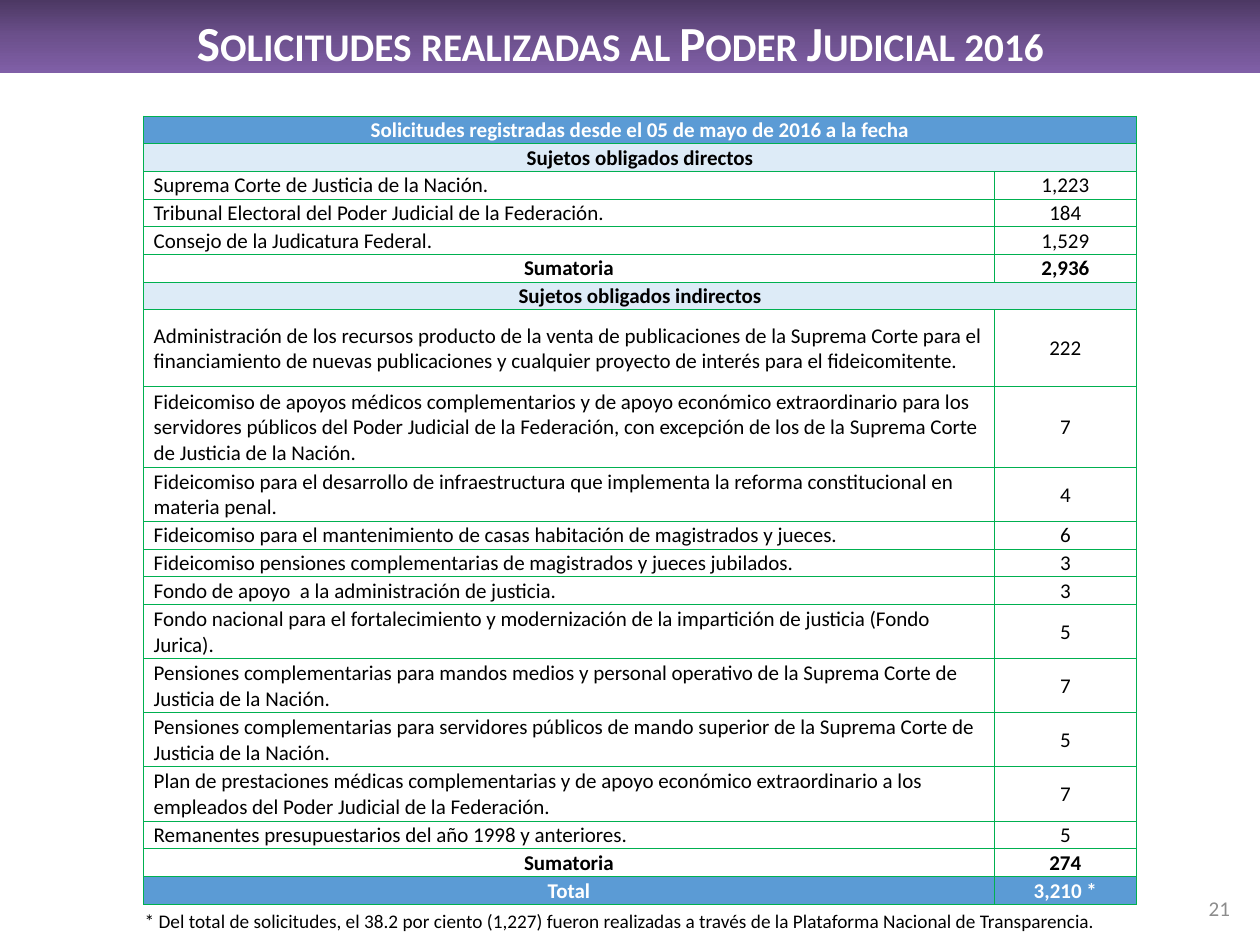
from copy import deepcopy
from lxml.etree import SubElement as Sub
from pptx import Presentation
from pptx.dml.color import RGBColor as RGB
from pptx.enum.shapes import MSO_SHAPE as Shape
from pptx.enum.text import MSO_ANCHOR as Anchor, MSO_AUTO_SIZE as Auto, PP_ALIGN as Align
from pptx.oxml import parse_xml
from pptx.oxml.ns import nsdecls, qn
from pptx.util import Inches, Pt

WHITE = RGB(0xFF, 0xFF, 0xFF)
BLACK = RGB(0, 0, 0)
GRAY = RGB(0x8C, 0x8C, 0x8C)
BLUE = RGB(0x5B, 0x9B, 0xD5)
PALE = RGB(0xDD, 0xEB, 0xF7)
GREEN = RGB(0x00, 0xB0, 0x50)
DARK = RGB(0x4C, 0x38, 0x63)
MID = RGB(0x6C, 0x50, 0x8C)
LIGHT = RGB(0x80, 0x5F, 0xA7)

ROW = 0.22
ROWS = [
    ("head", "Solicitudes registradas desde el 05 de mayo de 2016 a la fecha", None, ROW),
    ("group", "Sujetos obligados directos", None, ROW),
    ("item", "Suprema Corte de Justicia de la Nación.", "1,223", ROW),
    ("item", "Tribunal Electoral del Poder Judicial de la Federación.", "184", ROW),
    ("item", "Consejo de la Judicatura Federal.", "1,529", ROW),
    ("sum", "Sumatoria", "2,936", ROW),
    ("group", "Sujetos obligados indirectos", None, ROW),
    ("item", "Administración de los recursos producto de la venta de publicaciones de la Suprema Corte "
     "para el financiamiento de nuevas publicaciones y cualquier proyecto de interés para el "
     "fideicomitente.", "222", 0.61),
    ("item", "Fideicomiso de apoyos médicos complementarios y de apoyo económico extraordinario para los "
     "servidores públicos del Poder Judicial de la Federación, con excepción de los de la Suprema "
     "Corte de Justicia de la Nación.", "7", 0.64),
    ("item", "Fideicomiso para el desarrollo de infraestructura que implementa la reforma "
     "constitucional en materia penal.", "4", 0.43),
    ("item", "Fideicomiso para el mantenimiento de casas habitación de magistrados y jueces.", "6", ROW),
    ("item", "Fideicomiso pensiones complementarias de magistrados y jueces jubilados.", "3", ROW),
    ("item", "Fondo de apoyo  a la administración de justicia.", "3", ROW),
    ("item", "Fondo nacional para el fortalecimiento y modernización de la impartición de justicia "
     "(Fondo Jurica).", "5", 0.43),
    ("item", "Pensiones complementarias para mandos medios y personal operativo de la Suprema Corte de "
     "Justicia de la Nación.", "7", 0.43),
    ("item", "Pensiones complementarias para servidores públicos de mando superior de la Suprema Corte "
     "de Justicia de la Nación.", "5", 0.43),
    ("item", "Plan de prestaciones médicas complementarias y de apoyo económico extraordinario a los "
     "empleados del Poder Judicial de la Federación.", "7", 0.43),
    ("item", "Remanentes presupuestarios del año 1998 y anteriores.", "5", ROW),
    ("sum", "Sumatoria", "274", ROW),
    ("head", "Total", "3,210 *", ROW),
]
LOOKS = {
    "head": (BLUE, WHITE, True, Align.CENTER),
    "group": (PALE, BLACK, True, Align.CENTER),
    "item": (None, BLACK, False, Align.LEFT),
    "sum": (None, BLACK, True, Align.CENTER),
}


class Deck:
    """Holds the text style and the current slide, and adds each kind of element."""

    def __init__(self, font):
        self.font = font
        self.show = Presentation()
        self.show.slide_width, self.show.slide_height = Inches(10), Inches(7.5)
        self.slide = self.show.slides.add_slide(self.show.slide_layouts[5])

    def label(self, frame, text, size, color, align, bold=False):
        para = frame.paragraphs[0]
        para.alignment = align
        run = para.add_run()
        run.text = text
        form = {"name": self.font, "size": Pt(size), "bold": bold}
        for key, val in form.items():
            setattr(run.font, key, val)
        run.font.color.rgb = color
        return run

    def band(self, box, colors):
        bar = self.slide.shapes.add_shape(Shape.RECTANGLE, *map(Inches, box))
        bar.shadow.inherit = False
        bar.line.fill.background()
        bar.fill.gradient()
        bar.fill.gradient_angle = 270
        first = bar.fill.gradient_stops[0]._gs
        first.addnext(deepcopy(first))
        stops = bar.fill.gradient_stops
        for num, (stop, color) in enumerate(zip(stops, colors)):
            stop.position = num / (len(colors) - 1)
            stop.color.rgb = color

    def title(self, box, text, size, color):
        head = self.slide.shapes.title
        self.slide.shapes._spTree.append(head._element)
        head.left, head.top, head.width, head.height = map(Inches, box)
        frame = head.text_frame
        frame.auto_size, frame.vertical_anchor = Auto.NONE, Anchor.TOP
        props = self.label(frame, text, size, color, Align.CENTER, True)._r.rPr
        props.set("cap", "small")
        props.find(qn("a:solidFill")).addnext(parse_xml(
            f'<a:effectLst {nsdecls("a")}><a:outerShdw blurRad="38100" dist="38100" dir="2700000">'
            '<a:srgbClr val="000000"><a:alpha val="60000"/></a:srgbClr></a:outerShdw></a:effectLst>'))

    def text(self, box, text, size, color, align, anchor=Anchor.TOP):
        frame = self.slide.shapes.add_textbox(*map(Inches, box)).text_frame
        frame.word_wrap, frame.vertical_anchor = True, anchor
        self.label(frame, text, size, color, align)

    def edge(self, cell, color):
        props = cell._tc.get_or_add_tcPr()
        for num, side in enumerate(("lnL", "lnR", "lnT", "lnB")):
            line = Sub(props, qn(f"a:{side}"), w=str(Pt(0.5)))
            Sub(Sub(line, qn("a:solidFill")), qn("a:srgbClr"), val=str(color))
            props.insert(num, line)

    def cell(self, cell, text, look, pad):
        fill, color, bold, align = look
        form = {"margin_left": Inches(pad), "margin_right": Inches(pad), "margin_top": Inches(0.01),
                "margin_bottom": 0, "vertical_anchor": Anchor.MIDDLE}
        for key, val in form.items():
            setattr(cell, key, val)
        if fill is None:
            cell.fill.background()
        else:
            cell.fill.solid()
            cell.fill.fore_color.rgb = fill
        self.edge(cell, GREEN)
        if text:
            self.label(cell.text_frame, text, 12, color, align, bold)

    def table(self, box, cols, rows):
        grid = self.slide.shapes.add_table(len(rows), len(cols), *map(Inches, box)).table
        grid.first_row = grid.horz_banding = False
        for col, width in zip(grid.columns, cols):
            col.width = Inches(width)
        for num, (kind, name, count, height) in enumerate(rows):
            grid.rows[num].height = Inches(height)
            left, right = grid.cell(num, 0), grid.cell(num, 1)
            look = LOOKS[kind]
            self.cell(left, name, look, 0.08)
            self.cell(right, count, look[:3] + (Align.CENTER,), 0.01)
            if count is None:
                left.merge(right)


def main():
    deck = Deck("Calibri")
    deck.band((0, 0, 10, 0.58), (DARK, MID, LIGHT))
    deck.text((9.02, 7.01, 0.84, 0.4), "21", 12, GRAY, Align.RIGHT, Anchor.MIDDLE)
    deck.table((1.14, 0.92, 7.88, 6.25), (6.75, 1.13), ROWS)
    deck.title((0.2, 0.05, 9.45, 0.57), "Solicitudes realizadas al Poder Judicial 2016", 28, WHITE)
    deck.text((1.05, 7.17, 7.87, 0.29), "* Del total de solicitudes, el 38.2 por ciento (1,227) fueron "
              "realizadas a través de la Plataforma Nacional de Transparencia.", 11, BLACK, Align.JUSTIFY)
    deck.show.save("out.pptx")


if __name__ == "__main__":
    main()
